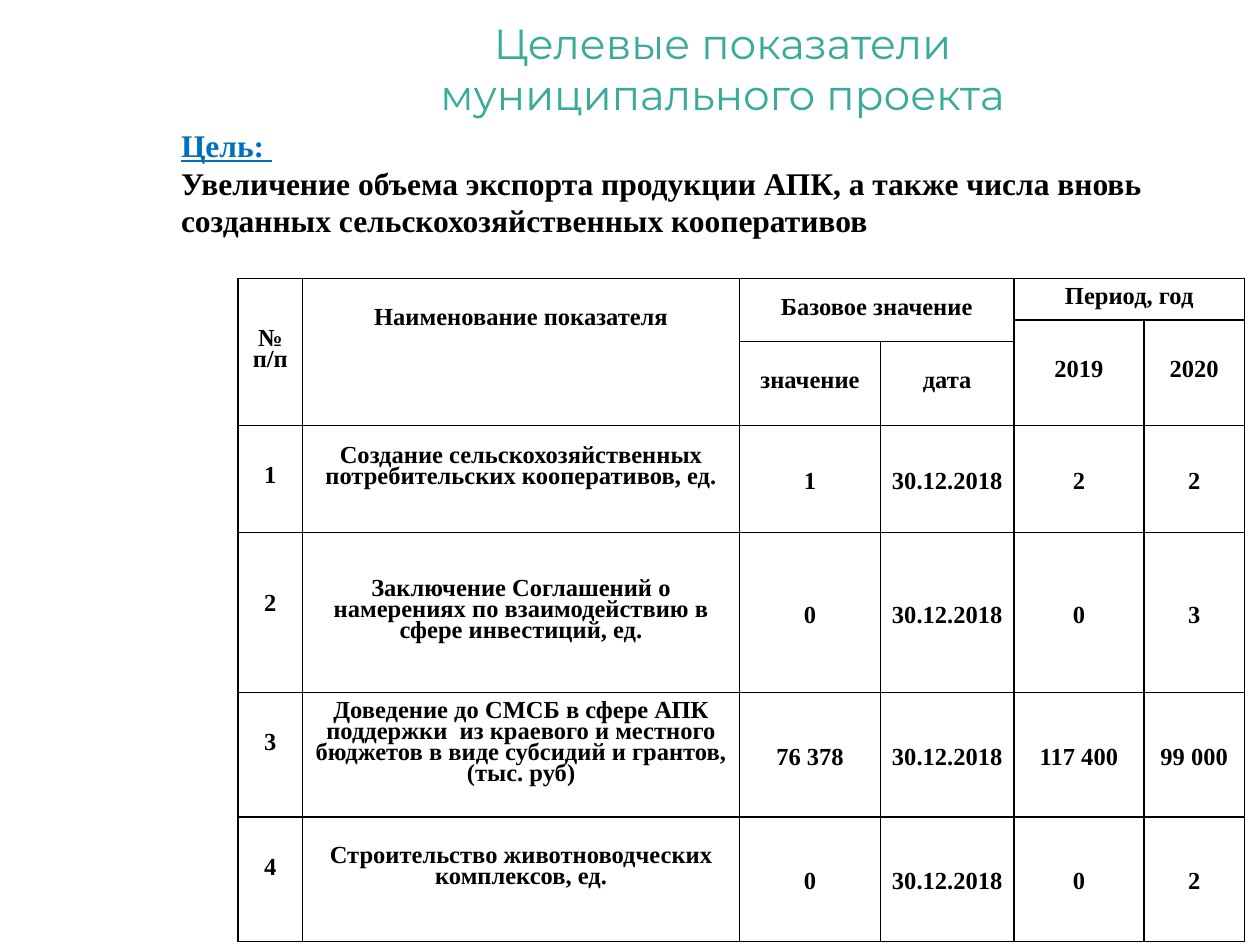
from lxml import etree
from pptx import Presentation
from pptx import util as u
from pptx.dml.color import RGBColor
from pptx.enum import text
from pptx.oxml.ns import qn

TEAL = RGBColor(0x39, 0xAB, 0x9B)
BLUE = RGBColor(0x00, 0x70, 0xC0)
BLACK = RGBColor(0x00, 0x00, 0x00)
SERIF = "Times New Roman"


def style(run, name, size, color, bold):
    run.font.name = name
    run.font.size = u.Pt(size)
    run.font.color.rgb = color
    run.font.bold = bold


def frame(cell):
    props = cell._tc.get_or_add_tcPr()
    for side in ("lnL", "lnR", "lnT", "lnB"):
        line = etree.SubElement(props, qn("a:" + side), w=str(u.Pt(1)))
        fill = etree.SubElement(line, qn("a:solidFill"))
        etree.SubElement(fill, qn("a:srgbClr"), val=str(BLACK))


prs = Presentation()
prs.slide_width = u.Cm(25.4)
prs.slide_height = u.Cm(19.05)
slide = prs.slides.add_slide(prs.slide_layouts[5])

title = slide.shapes.title
title.left, title.top = u.Cm(3.73), u.Cm(0.23)
title.width, title.height = u.Cm(21.67), u.Cm(2.3)
body = title.text_frame
body.text = "Целевые показатели\nмуниципального проекта"
body.auto_size = text.MSO_AUTO_SIZE.NONE
body.vertical_anchor = text.MSO_ANCHOR.TOP
for para in body.paragraphs:
    para.alignment = text.PP_ALIGN.CENTER
    style(para.runs[0], "Montserrat", 24, TEAL, False)

goal = slide.shapes.add_textbox(u.Cm(3.4), u.Cm(2.41), u.Cm(22), u.Cm(2.57))
body = goal.text_frame
body.word_wrap = True
body.text = ("Цель: \nУвеличение объема экспорта продукции АПК, "
             "а также числа вновь созданных сельскохозяйственных кооперативов")
for para, color in zip(body.paragraphs, (BLUE, BLACK)):
    style(para.runs[0], SERIF, 18, color, True)
body.paragraphs[0].runs[0].font.underline = True

DATE = "30.12.2018"
rows = [
    ["№ п/п", "Наименование показателя", "Базовое значение", "", "Период, год", ""],
    ["", "", "", "", "2019", "2020"],
    ["", "", "значение", "дата", "", ""],
    ["1", "Создание сельскохозяйственных потребительских кооперативов, ед.",
     "1", DATE, "2", "2"],
    ["2", "Заключение Соглашений о намерениях по взаимодействию в сфере инвестиций, ед.",
     "0", DATE, "0", "3"],
    ["3", "Доведение до СМСБ в сфере АПК поддержки  из краевого и местного "
     "бюджетов в виде субсидий и грантов,\n(тыс. руб)",
     "76 378", DATE, "117 400", "99 000"],
    ["4", "Строительство животноводческих комплексов, ед.", "0", DATE, "0", "2"],
]
wide = [1.3, 8.81, 2.84, 2.69, 2.62, 2.03]
high = [0.84, 0.43, 1.69, 2.16, 3.23, 2.51, 2.51]
spans = [(0, 0, 2, 0), (0, 1, 2, 1), (0, 2, 1, 3),
         (0, 4, 0, 5), (1, 4, 2, 4), (1, 5, 2, 5)]
below = {0: 1.27, 3: 0.42, 5: 0.42, 6: 0.42}

table = slide.shapes.add_table(
    len(rows), len(wide), u.Cm(4.8), u.Cm(5.61),
    u.Cm(sum(wide)), u.Cm(sum(high))).table
table.first_row = table.horz_banding = False
for col, size in zip(table.columns, wide):
    col.width = u.Cm(size)
for row, size in zip(table.rows, high):
    row.height = u.Cm(size)

for r, words in enumerate(rows):
    for c, word in enumerate(words):
        cell = table.cell(r, c)
        frame(cell)
        cell.fill.background()
        cell.margin_left = cell.margin_right = u.Cm(0.15)
        cell.margin_top = cell.margin_bottom = 0
        cell.vertical_anchor = text.MSO_ANCHOR.MIDDLE
        if r > 2 and c == 0:
            cell.vertical_anchor = text.MSO_ANCHOR.TOP
            cell.margin_top = u.Cm(1.27 if r == 4 else 0.85)
        if c == 1:
            cell.margin_bottom = u.Cm(below.get(r, 0))
        cell.text_frame.text = word
        for para in cell.text_frame.paragraphs:
            para.alignment = text.PP_ALIGN.CENTER
            para.line_spacing = u.Pt(18 if r > 2 and c > 1 else 12)
            for run in para.runs:
                style(run, SERIF, 14, BLACK, True)

for top, left, low, right in spans:
    table.cell(top, left).merge(table.cell(low, right))

prs.save("out.pptx")
